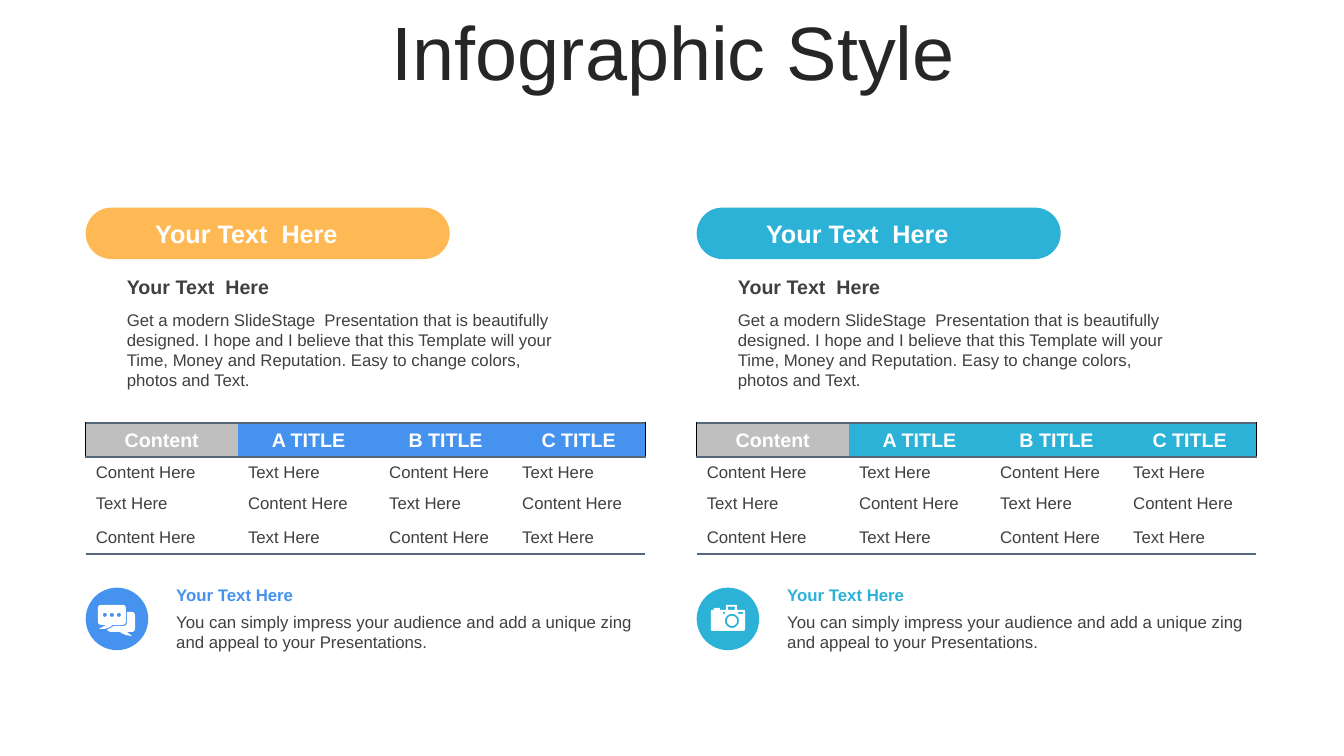
"""Build the Infographic Style slide with two matching panels."""
from dataclasses import dataclass
from math import cos, pi, sin

from lxml.etree import SubElement
from pptx import Presentation
from pptx.dml.color import RGBColor
from pptx.enum.shapes import MSO_SHAPE as SHAPE
from pptx.enum.text import MSO_ANCHOR as ANCHOR, MSO_AUTO_SIZE as AUTO, PP_ALIGN as ALIGN
from pptx.oxml.ns import qn
from pptx.shapes.shapetree import GroupShapes, SlideShapes
from pptx.table import _Cell as Cell
from pptx.text.text import _Paragraph as Paragraph
from pptx.util import Inches, Pt

WHITE = RGBColor(0xFF, 0xFF, 0xFF)
BLACK = RGBColor(0x00, 0x00, 0x00)
INK = RGBColor(0x26, 0x26, 0x26)
DARK = RGBColor(0x40, 0x40, 0x40)
GREY = RGBColor(0xBF, 0xBF, 0xBF)
SLATE = RGBColor(0x57, 0x68, 0x7C)
ORANGE = RGBColor(0xFF, 0xB9, 0x54)
BLUE = RGBColor(0x45, 0x92, 0xEF)
CYAN = RGBColor(0x2C, 0xB2, 0xD7)

NO_STYLE = "{2D5ABB26-0587-4C30-8999-92F81FD0307C}"
HEADING = "Your Text  Here"
BODY = ("Get a modern SlideStage  Presentation that is beautifully designed. "
        "I hope and I believe that this Template will your Time, Money and "
        "Reputation. Easy to change colors, photos and Text.")
FOOTER = ("You can simply impress your audience and add a unique zing "
          "and appeal to your Presentations.")
HEADER = ("Content", "A TITLE", "B TITLE", "C TITLE")
ENTRIES = ("Content Here", "Text Here")
COL_WIDTHS = (1.51, 1.4, 1.32, 1.32)
ROW_HEIGHTS = (0.33, 0.3, 0.33, 0.33)
ICON_TOP = 5.83

Contour = list[tuple[float, float]]


@dataclass(frozen=True)
class Panel:
    left: float
    pill: RGBColor
    accent: RGBColor
    icon: list[Contour]


def circle(cx: float, cy: float, radius: float) -> Contour:
    """Return points around a circle."""
    angles = [2 * pi * i / 32 for i in range(32)]
    return [(cx + radius * cos(a), cy + radius * sin(a)) for a in angles]


def box(left: float, top: float, right: float, bottom: float) -> Contour:
    """Return the corners of a rectangle."""
    return [(left, top), (right, top), (right, bottom), (left, bottom)]


def rounded(corners: list[tuple[float, float, float]]) -> Contour:
    """Return a polygon whose (x, y, radius) corners are rounded."""
    points: Contour = []
    for i, (x, y, radius) in enumerate(corners):
        if not radius:
            points.append((x, y))
            continue
        ends = []
        for nx, ny, _ in (corners[i - 1], corners[(i + 1) % len(corners)]):
            k = radius / ((nx - x) ** 2 + (ny - y) ** 2) ** 0.5
            ends.append((x + (nx - x) * k, y + (ny - y) * k))
        (ax, ay), (bx, by) = ends
        for t in (0, 0.2, 0.4, 0.6, 0.8, 1):
            u = 1 - t
            points.append((u * u * ax + 2 * u * t * x + t * t * bx,
                           u * u * ay + 2 * u * t * y + t * t * by))
    return points


CHAT = [
    rounded([(0.12, 0.17, 0.04), (0.4, 0.17, 0.04), (0.4, 0.37, 0.04), (0.27, 0.37, 0),
             (0.21, 0.41, 0.04), (0.13, 0.41, 0), (0.2, 0.37, 0), (0.12, 0.37, 0.04)]),
    rounded([(0.41, 0.24, 0), (0.49, 0.24, 0.04), (0.49, 0.44, 0.04), (0.41, 0.44, 0),
             (0.46, 0.48, 0), (0.39, 0.47, 0.03), (0.34, 0.44, 0), (0.24, 0.44, 0.02),
             (0.21, 0.42, 0), (0.28, 0.38, 0), (0.41, 0.38, 0.04)]),
    *[circle(x, 0.27, 0.02) for x in (0.19, 0.26, 0.33)],
]
CAMERA = [
    rounded([(0.14, 0.22, 0.02), (0.17, 0.22, 0), (0.17, 0.2, 0), (0.23, 0.2, 0),
             (0.23, 0.22, 0), (0.29, 0.22, 0), (0.29, 0.17, 0.01), (0.4, 0.17, 0.01),
             (0.4, 0.22, 0), (0.48, 0.22, 0.02), (0.48, 0.43, 0.02), (0.14, 0.43, 0.02)]),
    circle(0.35, 0.33, 0.07),
    circle(0.35, 0.33, 0.05),
    box(0.26, 0.24, 0.28, 0.26),
    box(0.41, 0.24, 0.46, 0.26),
    box(0.31, 0.19, 0.38, 0.22),
]
PANELS = (Panel(0.85, ORANGE, BLUE, CHAT), Panel(6.91, CYAN, CYAN, CAMERA))


def write(p: Paragraph, text: str, size: float, color: RGBColor, bold: bool = False) -> None:
    """Fill a paragraph with text in one font."""
    p.text = text
    p.font.name = "Arial"
    p.font.size = Pt(size)
    p.font.bold = bold
    p.font.color.rgb = color


def add_text(shapes: SlideShapes | GroupShapes, left: float, top: float, width: float,
             height: float, text: str, size: float, color: RGBColor,
             bold: bool = False) -> None:
    """Add a wrapping text box that grows with its text."""
    tf = shapes.add_textbox(Inches(left), Inches(top), Inches(width), Inches(height)).text_frame
    tf.word_wrap = True
    tf.auto_size = AUTO.SHAPE_TO_FIT_TEXT
    write(tf.paragraphs[0], text, size, color, bold)


def add_solid(shapes: SlideShapes, kind: SHAPE, left: float, top: float, width: float,
              height: float, color: RGBColor) -> None:
    """Add a plain filled shape, with fully round ends if it is a pill."""
    sp = shapes.add_shape(kind, Inches(left), Inches(top), Inches(width), Inches(height))
    sp.shadow.inherit = False
    sp.fill.solid()
    sp.fill.fore_color.rgb = color
    sp.line.fill.background()
    if kind == SHAPE.ROUNDED_RECTANGLE:
        sp.adjustments[0] = 0.5


def add_icon(shapes: SlideShapes, left: float, top: float, contours: list[Contour]) -> None:
    """Add a white outline with holes, drawn in thousandths of an inch."""
    builder = None
    for contour in contours:
        first, *rest = [((left + x) * 1000, (top + y) * 1000) for x, y in contour]
        if builder is None:
            builder = shapes.build_freeform(*first, scale=Inches(1) / 1000)
        else:
            builder.move_to(*first)
        builder.add_line_segments(rest, close=True)
    sp = builder.convert_to_shape()
    sp.shadow.inherit = False
    sp.fill.solid()
    sp.fill.fore_color.rgb = WHITE
    sp.line.fill.background()


def add_border(cell: Cell, side: str, color: RGBColor, width: float) -> None:
    """Draw one side of a cell: L, R, T or B."""
    ln = SubElement(cell._tc.get_or_add_tcPr(), qn(f"a:ln{side}"), w=str(Pt(width)))
    SubElement(SubElement(ln, qn("a:solidFill")), qn("a:srgbClr"), val=str(color))


def add_panel_table(shapes: SlideShapes, left: float, accent: RGBColor) -> None:
    """Add a table with a coloured header and alternating entries."""
    table = shapes.add_table(len(ROW_HEIGHTS), len(COL_WIDTHS), Inches(left), Inches(4.2),
                             Inches(sum(COL_WIDTHS)), Inches(sum(ROW_HEIGHTS))).table
    table.horz_banding = False
    table._tbl.tblPr.find(qn("a:tableStyleId")).text = NO_STYLE
    for column, width in zip(table.columns, COL_WIDTHS):
        column.width = Inches(width)
    last_row, last_col = len(ROW_HEIGHTS) - 1, len(COL_WIDTHS) - 1
    for r, height in enumerate(ROW_HEIGHTS):
        table.rows[r].height = Inches(height)
        for c, title in enumerate(HEADER):
            cell = table.cell(r, c)
            cell.vertical_anchor = ANCHOR.MIDDLE
            p = cell.text_frame.paragraphs[0]
            if r == 0:
                write(p, title, 14, WHITE, True)
                p.alignment = ALIGN.CENTER
                if c == 0:
                    add_border(cell, "L", BLACK, 1)
                if c == last_col:
                    add_border(cell, "R", BLACK, 1)
                add_border(cell, "T", SLATE, 1.5)
            else:
                write(p, ENTRIES[(r + c + 1) % 2], 12, DARK)
            if r in (0, last_row):
                add_border(cell, "B", SLATE, 1.5)
            cell.fill.solid()
            cell.fill.fore_color.rgb = WHITE if r else accent if c else GREY


def add_panel(shapes: SlideShapes, panel: Panel) -> None:
    """Add one half of the slide."""
    x = panel.left
    add_panel_table(shapes, x, panel.accent)
    add_solid(shapes, SHAPE.OVAL, x, ICON_TOP, 0.62, 0.62, panel.accent)
    group = shapes.add_group_shape().shapes
    add_text(group, x + 0.8, 6.02, 4.86, 0.5, FOOTER, 12, DARK)
    add_text(group, x + 0.8, 5.75, 4.86, 0.3, "Your Text Here", 12, panel.accent, True)
    add_icon(shapes, x, ICON_TOP, panel.icon)
    add_solid(shapes, SHAPE.ROUNDED_RECTANGLE, x, 2.06, 3.61, 0.51, panel.pill)
    add_text(shapes, x + 0.31, 3.02, 4.57, 0.91, BODY, 12, DARK)
    add_text(shapes, x + 0.31, 2.68, 2.68, 0.34, HEADING, 14, DARK, True)
    add_text(shapes, x + 0.59, 2.12, 2.44, 0.4, HEADING, 18, WHITE, True)


def main() -> None:
    """Build and save the slide."""
    prs = Presentation()
    prs.slide_width, prs.slide_height = Inches(13.33), Inches(7.5)
    s = prs.slides.add_slide(prs.slide_layouts[6])
    tf = s.shapes.add_textbox(Inches(0.35), Inches(0.16), Inches(12.66), Inches(0.79)).text_frame
    tf.word_wrap = True
    tf.vertical_anchor = ANCHOR.MIDDLE
    p = tf.paragraphs[0]
    write(p, "Infographic Style", 54, INK)
    p.alignment = ALIGN.CENTER
    p.line_spacing = 0.9
    for panel in PANELS:
        add_panel(s.shapes, panel)
    prs.save("out.pptx")


if __name__ == "__main__":
    main()
